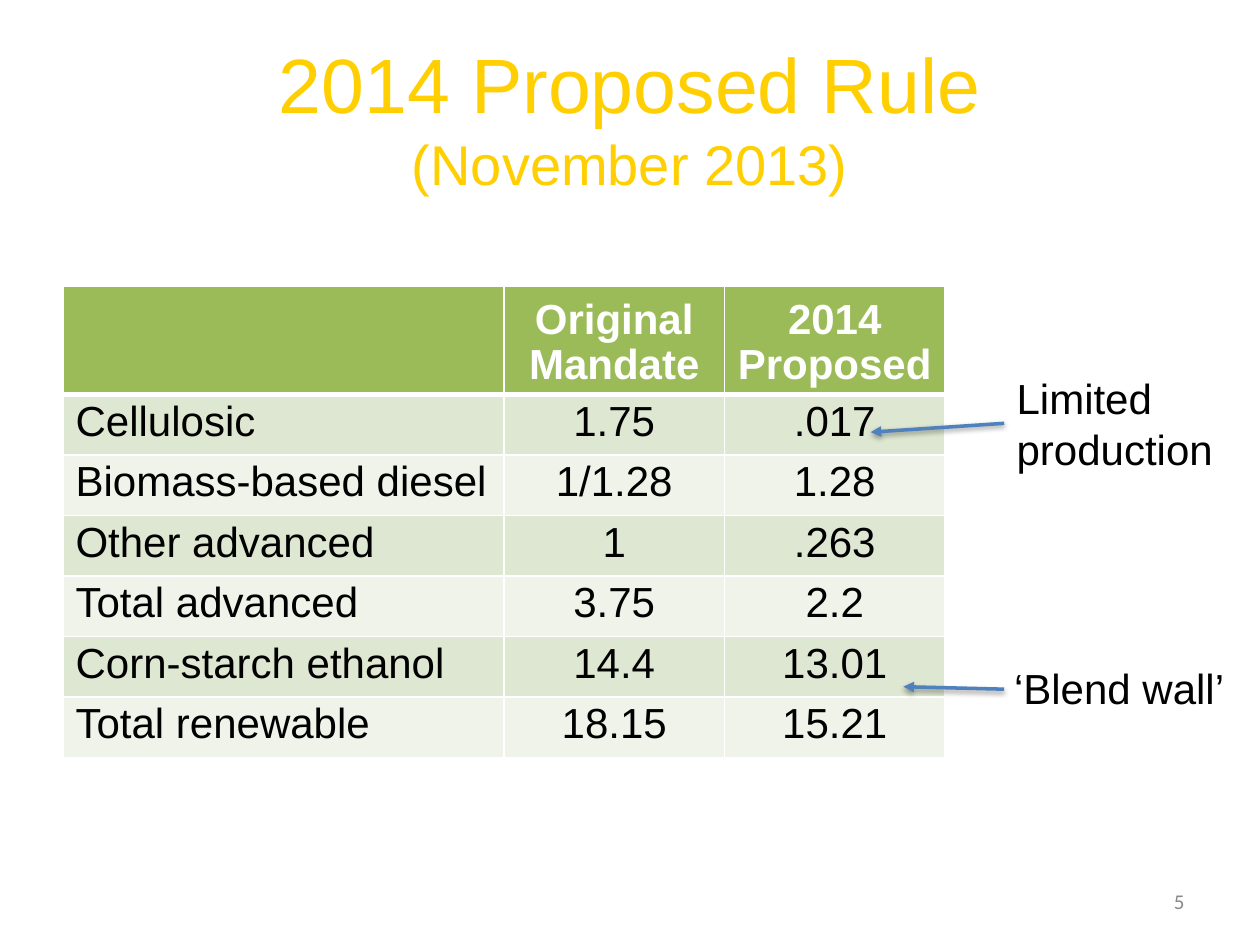
from lxml.etree import SubElement
from pptx import Presentation
from pptx.dml.color import RGBColor
from pptx.enum.shapes import MSO_CONNECTOR
from pptx.enum.text import MSO_ANCHOR, PP_ALIGN
from pptx.oxml.ns import qn
from pptx.util import Inches, Pt

# Content
COLORS = {
    "title": "FFCF01", "header": "9BBB59", "odd": "DEE7D1", "even": "EFF3EA",
    "arrow": "4F81BD", "number": "898989", "text": "000000", "white": "FFFFFF",
}
TITLE = [("2014 Proposed Rule\v", 44), ("(November 2013)", 32)]
ROWS = [
    ("", "Original Mandate", "2014 Proposed"),
    ("Cellulosic", "1.75", ".017"),
    ("Biomass-based diesel", "1/1.28", "1.28"),
    ("Other advanced", "1", ".263"),
    ("Total advanced", "3.75", "2.2"),
    ("Corn-starch ethanol", "14.4", "13.01"),
    ("Total renewable", "18.15", "15.21"),
]
COLUMN_WIDTHS = (3.5, 1.75, 1.75)
HEADER_HEIGHT, ROW_HEIGHT = 0.83, 0.47
# Note text, its box, then the arrow's start and end
NOTES = [
    ("Limited production", (7.97, 2.91, 1.81, 0.91), (7.97, 3.36), (6.91, 3.43)),
    ("‘Blend wall’", (7.95, 5.21, 2.05, 0.5), (7.97, 5.47), (7.17, 5.45)),
]


def write(frame, spans, size=24, color="text", font="Arial", bold=False,
          align=PP_ALIGN.LEFT, anchor=MSO_ANCHOR.TOP, spacing=None):
    """Fill a text frame or cell; spans is a string or (text, size) pairs."""
    frame.word_wrap = True
    frame.vertical_anchor = anchor
    para = frame.paragraphs[0]
    para.alignment = align
    para.line_spacing = spacing
    if isinstance(spans, str):
        spans = [(spans, size)]
    for text, points in spans:
        lines = text.split("\v")
        for index, line in enumerate(lines):
            if index:
                para.add_line_break()
            if line:
                span = para.add_run()
                span.text = line
                span.font.size = Pt(points)
                span.font.name = font
                span.font.bold = bold
                span.font.color.rgb = RGBColor.from_string(COLORS[color])


def add_text(page, place, spans, **style):
    box = page.shapes.add_textbox(*map(Inches, place))
    write(box.text_frame, spans, **style)


def add_color(parent, color):
    return SubElement(parent, qn("a:srgbClr"), val=COLORS[color])


def set_borders(cell, bottom):
    properties = cell._tc.get_or_add_tcPr()
    for index, (side, points) in enumerate(
            (("lnL", 1), ("lnR", 1), ("lnT", 1), ("lnB", bottom))):
        line = SubElement(properties, qn("a:" + side), w=str(Pt(points)))
        add_color(SubElement(line, qn("a:solidFill")), "white")
        properties.insert(index, line)


def add_arrow(page, start, end):
    arrow = page.shapes.add_connector(
        MSO_CONNECTOR.STRAIGHT, *map(Inches, start + end))
    arrow.line.width = Pt(2)
    arrow.line.color.rgb = RGBColor.from_string(COLORS["arrow"])
    SubElement(arrow.line._get_or_add_ln(), qn("a:tailEnd"), type="triangle")
    effects = SubElement(arrow._element.spPr, qn("a:effectLst"))
    shadow = SubElement(effects, qn("a:outerShdw"), blurRad=str(Pt(3.1)),
                        dist=str(Pt(1.6)), dir="5400000", rotWithShape="0")
    SubElement(add_color(shadow, "text"), qn("a:alpha"), val="38000")


def add_mandate_table(page):
    height = HEADER_HEIGHT + ROW_HEIGHT * (len(ROWS) - 1)
    table = page.shapes.add_table(
        len(ROWS), len(COLUMN_WIDTHS), Inches(0.5), Inches(2.27),
        Inches(sum(COLUMN_WIDTHS)), Inches(height)).table
    for column, width in zip(table.columns, COLUMN_WIDTHS):
        column.width = Inches(width)
    for r, values in enumerate(ROWS):
        header = r == 0
        table.rows[r].height = Inches(HEADER_HEIGHT if header else ROW_HEIGHT)
        fill = "header" if header else ("odd" if r % 2 else "even")
        for c, value in enumerate(values):
            cell = table.cell(r, c)
            cell.fill.solid()
            cell.fill.fore_color.rgb = RGBColor.from_string(COLORS[fill])
            set_borders(cell, bottom=3 if header else 1)
            cell.vertical_anchor = MSO_ANCHOR.BOTTOM if header else MSO_ANCHOR.TOP
            write(cell.text_frame, value, bold=header, spacing=0.95,
                  color="white" if header else "text",
                  align=PP_ALIGN.CENTER if c else PP_ALIGN.LEFT,
                  anchor=None)


def main():
    deck = Presentation()
    deck.slide_width, deck.slide_height = Inches(10), Inches(7.5)
    page = deck.slides.add_slide(deck.slide_layouts[6])

    # Title and page number
    add_text(page, (0.5, 0.3, 9, 1.25), TITLE, color="title",
             align=PP_ALIGN.CENTER, anchor=MSO_ANCHOR.MIDDLE)
    add_text(page, (7.17, 6.95, 2.33, 0.4), "5", size=12, color="number",
             font="Calibri", align=PP_ALIGN.RIGHT, anchor=MSO_ANCHOR.MIDDLE)

    # Table, then the notes pointing at it
    add_mandate_table(page)
    for text, place, start, end in NOTES:
        add_arrow(page, start, end)
        add_text(page, place, text)

    deck.save("out.pptx")


if __name__ == "__main__":
    main()
